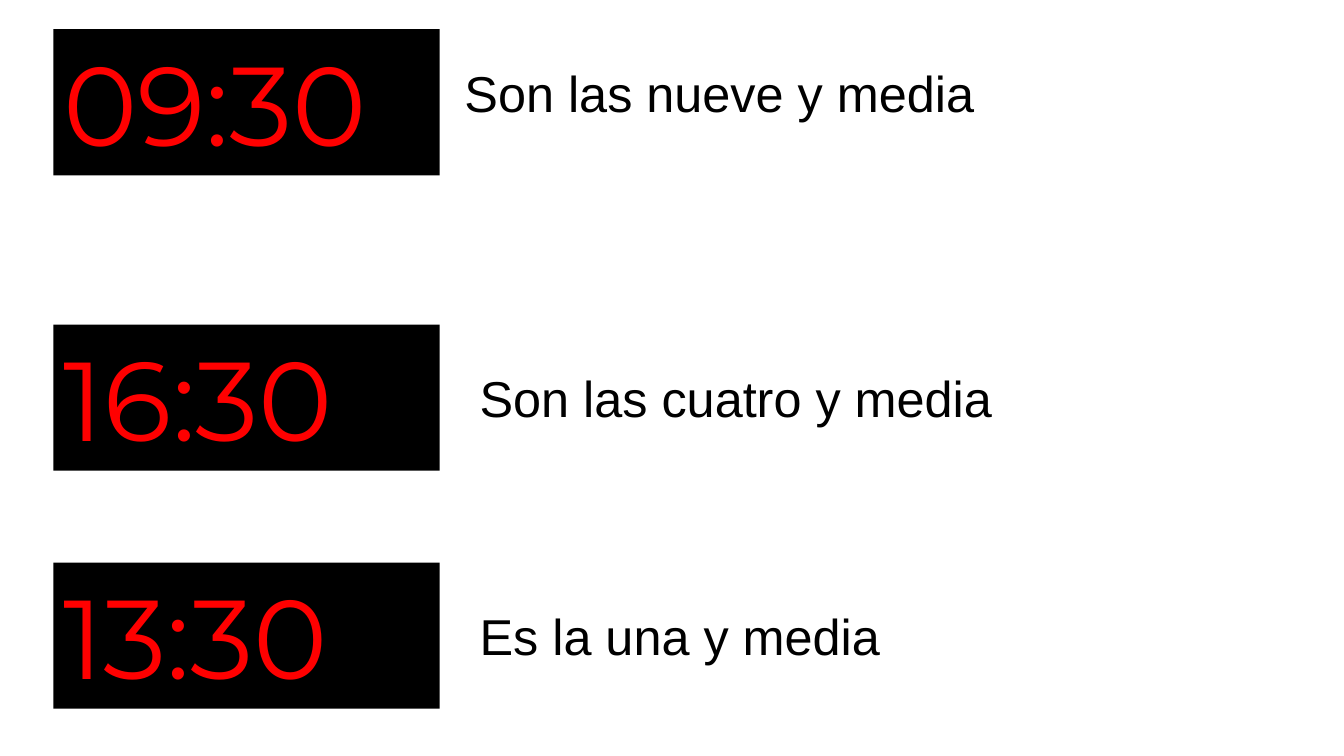
import pptx
import pptx.dml.color
import pptx.enum.shapes
import pptx.enum.text
import pptx.util

Pt = pptx.util.Pt
COLOURS = {"display": "000000", "digits": "FF0000", "phrase": "000000"}
CLOCK_LEFT, CLOCK_WIDTH, CLOCK_HEIGHT = 38.2, 275.8, 104.4
PHRASE_WIDTH, PHRASE_HEIGHT = 400.3, 51.1

CLOCK_ROWS = [
    (20.9, "09:30", "Son las nueve y media", 286.5, 20.2),
    (231.8, "16:30", "Son las cuatro y media", 297.3, 26.6),
    (401.8, "13:30", "Es la una y media", 297.3, 26.6),
]


def write_text(shape, text, font_name, size, colour):
    """Write one left-aligned run into the shape."""
    frame = shape.text_frame
    frame.word_wrap = True
    frame.auto_size = pptx.enum.text.MSO_AUTO_SIZE.SHAPE_TO_FIT_TEXT
    frame.vertical_anchor = pptx.enum.text.MSO_ANCHOR.TOP
    paragraph = frame.paragraphs[0]
    paragraph.alignment = pptx.enum.text.PP_ALIGN.LEFT
    run = paragraph.add_run()
    run.text = text
    run.font.name = font_name
    run.font.size = Pt(size)
    run.font.color.rgb = pptx.dml.color.RGBColor.from_string(COLOURS[colour])


def add_clock_row(slide, left, top, time, phrase, phrase_dx, phrase_dy):
    """Place a digital clock and its spoken time relative to the row corner."""
    clock = slide.shapes.add_shape(
        pptx.enum.shapes.MSO_SHAPE.RECTANGLE,
        Pt(left), Pt(top), Pt(CLOCK_WIDTH), Pt(CLOCK_HEIGHT))
    clock.shadow.inherit = False
    clock.fill.solid()
    clock.fill.fore_color.rgb = pptx.dml.color.RGBColor.from_string(COLOURS["display"])
    clock.line.fill.background()
    write_text(clock, time, "Montserrat", 80, "digits")

    phrase_box = slide.shapes.add_textbox(
        Pt(left + phrase_dx), Pt(top + phrase_dy), Pt(PHRASE_WIDTH), Pt(PHRASE_HEIGHT))
    write_text(phrase_box, phrase, "Arial", 36, "phrase")


def main():
    """Build the slide and save the presentation."""
    presentation = pptx.Presentation()
    presentation.slide_width = Pt(960)
    presentation.slide_height = Pt(540)
    slide = presentation.slides.add_slide(presentation.slide_layouts[6])
    for top, time, phrase, phrase_dx, phrase_dy in CLOCK_ROWS:
        add_clock_row(slide, CLOCK_LEFT, top, time, phrase, phrase_dx, phrase_dy)
    presentation.save("out.pptx")


if __name__ == "__main__":
    main()
